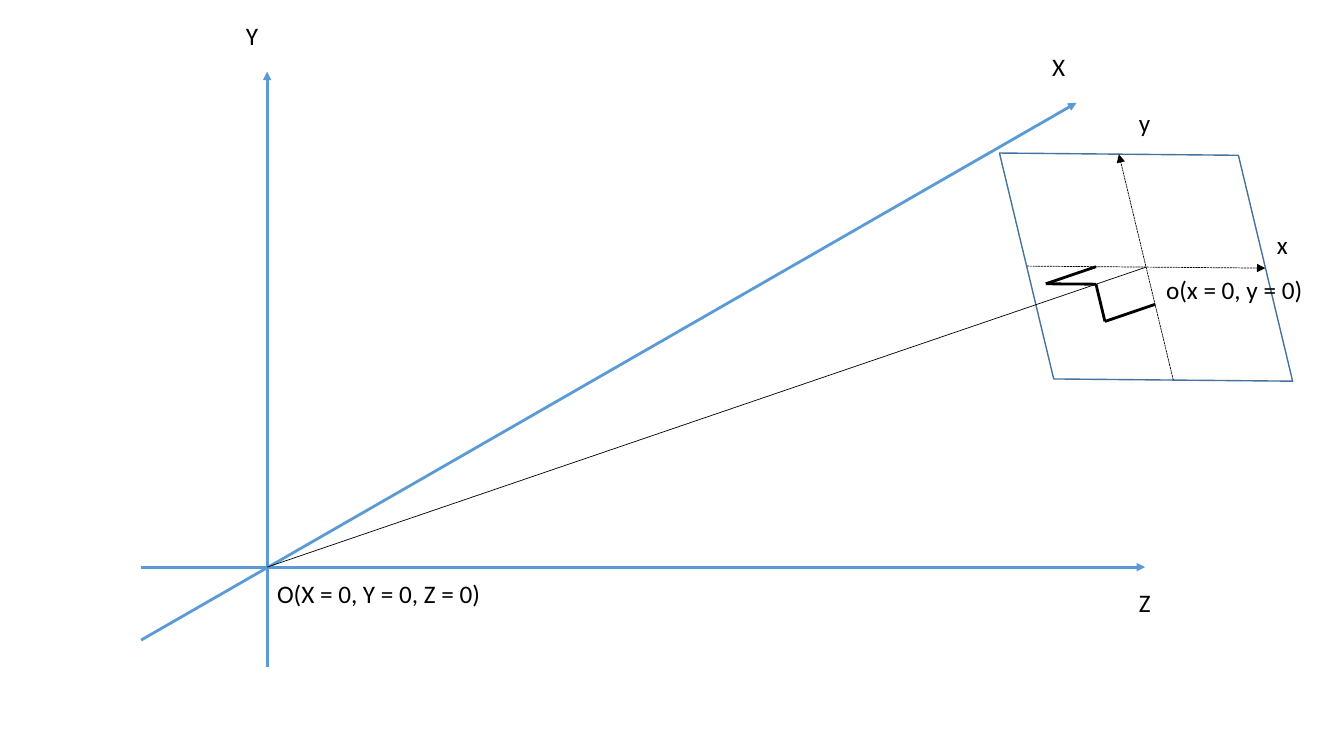
from lxml import etree
from pptx import Presentation
from pptx import util as u
from pptx.dml import color, line as dash
from pptx.enum import dml, shapes, text
from pptx.oxml import ns

# Grid of 40 columns by 22.5 rows, square cells
COLS, ROWS = 40, 22.5
CELL = u.Inches(7.5) / ROWS
INK = {"axis": "5B9BD5", "plane": "43739E", "black": "000000", "white": "FFFFFF"}

# World origin, plane centre, and half-vectors of the plane
WORLD, PLANE = (7.95, 16.88), (34.11, 7.95)
ACROSS, DOWN = (3.55, 0.03), (0.81, 3.36)
RAY = (WORLD[0] - PLANE[0], WORLD[1] - PLANE[1])


def cell(n):
    return u.Emu(round(n * CELL))


def rgb(name):
    return color.RGBColor.from_string(INK[name])


def point(across=0, down=0, ray=0):
    """Grid position reached from the plane's centre."""
    return tuple(PLANE[i] + across * ACROSS[i] + down * DOWN[i] + ray * RAY[i]
                 for i in (0, 1))


def line(slide, start, end, ink="black", width=2, arrow=False, dashed=False):
    link = slide.shapes.add_connector(
        shapes.MSO_CONNECTOR.STRAIGHT, *map(cell, start + end))
    link.line.color.rgb = rgb(ink)
    link.line.width = u.Pt(width)
    if dashed:
        link.line.dash_style = dml.MSO_LINE.SQUARE_DOT
        link.line._ln.find(ns.qn("a:prstDash")).set("val", "sysDash")
    if arrow:
        etree.SubElement(link.line._ln, ns.qn("a:tailEnd"), type="triangle")
    etree.SubElement(link._element.spPr, ns.qn("a:effectLst"))


def label(slide, words, left, top, width, filled=False):
    area = [cell(n) for n in (left, top, width, 1.21)]
    if filled:
        box = slide.shapes.add_shape(shapes.MSO_SHAPE.RECTANGLE, *area)
        box.shadow.inherit = False
        box.fill.solid()
        box.fill.fore_color.rgb = rgb("white")
        box.line.fill.background()
    else:
        box = slide.shapes.add_textbox(*area)
    frame = box.text_frame
    frame.text = words
    frame.word_wrap = False
    frame.auto_size = text.MSO_AUTO_SIZE.SHAPE_TO_FIT_TEXT
    frame.vertical_anchor = text.MSO_ANCHOR.TOP
    para = frame.paragraphs[0]
    para.alignment = text.PP_ALIGN.LEFT
    font = para.runs[0].font
    font.name, font.size = "Calibri", u.Pt(18)
    font.color.rgb = rgb("black")


def plane(slide, width=8.64, height=6.9):
    left, top = PLANE[0] - width / 2, PLANE[1] - height / 2
    shape = slide.shapes.add_shape(
        shapes.MSO_SHAPE.PARALLELOGRAM, *map(cell, (left, top, width, height)))
    shape.rotation = 256.5
    shape.shadow.inherit = False
    shape.fill.solid()
    shape.fill.fore_color.rgb = rgb("white")
    shape.line.color.rgb = rgb("plane")
    shape.line.width = u.Pt(1)


def main():
    deck = Presentation()
    deck.slide_width, deck.slide_height = cell(COLS), cell(ROWS)
    slide = deck.slides.add_slide(deck.slide_layouts[6])

    # World axes: Z, Y, X
    for start, end in (((4.2, WORLD[1]), (34.08, WORLD[1])),
                       ((WORLD[0], 19.86), (WORLD[0], 2.13)),
                       ((4.2, 19.05), (32.04, 3.06))):
        line(slide, start, end, "axis", arrow=True)
    label(slide, "X", 31.02, 1.38, 0.99)
    label(slide, "Y", 7.02, 0.45, 0.96)
    label(slide, "Z", 33.6, 17.34, 0.96)

    # Plane with its own axes
    plane(slide)
    line(slide, point(down=1), point(down=-1), width=0.5, arrow=True, dashed=True)
    line(slide, point(across=-1), point(across=1), width=0.5, arrow=True, dashed=True)
    label(slide, "y", 33.6, 3.06, 0.96, filled=True)
    label(slide, "x", 37.71, 6.69, 0.93, filled=True)

    # Ray to the world origin and its right-angle marks
    line(slide, PLANE, WORLD, width=0.5)
    near = 0.057
    for side in ({"down": 0.33}, {"across": -0.42}):
        corner = point(ray=near, **side)
        line(slide, point(**side), corner)
        line(slide, corner, point(ray=near))

    # Origins
    label(slide, "O(X = 0, Y = 0, Z = 0)", 7.95, 17.07, 6.75)
    label(slide, "o(x = 0, y = 0)", 34.41, 8.01, 4.71)
    deck.save("out.pptx")


if __name__ == "__main__":
    main()
